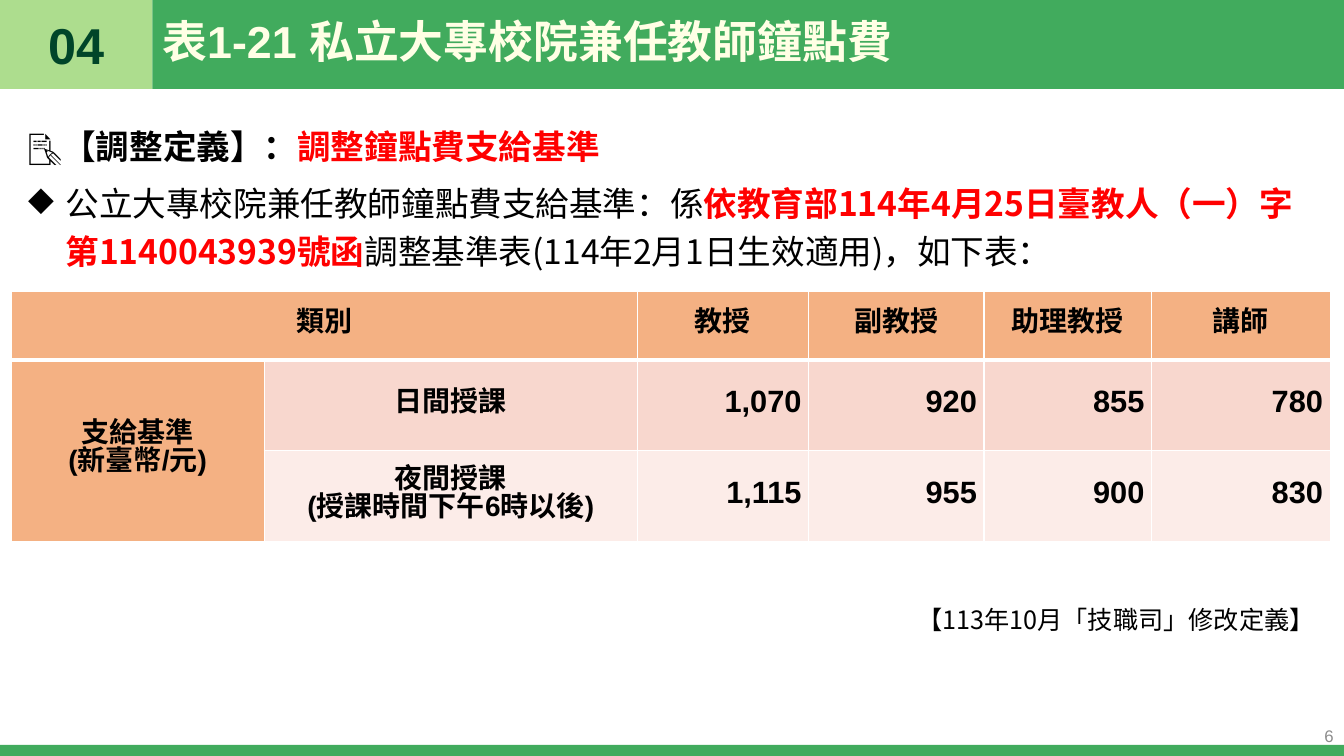
"""Build the slide on hourly pay for part-time teachers at private colleges."""
from dataclasses import dataclass

from lxml import etree
from pptx import Presentation
from pptx.dml.color import RGBColor
from pptx.enum.shapes import MSO_SHAPE
from pptx.enum.text import MSO_ANCHOR, PP_ALIGN
from pptx.oxml.ns import qn
from pptx.util import Cm, Pt

RECTANGLE = MSO_SHAPE.RECTANGLE
LEFT, CENTER, RIGHT = PP_ALIGN.LEFT, PP_ALIGN.CENTER, PP_ALIGN.RIGHT
TOP, MIDDLE = MSO_ANCHOR.TOP, MSO_ANCHOR.MIDDLE


@dataclass(frozen=True)
class Theme:
    """Hold the colours, fonts and type sizes of the slide."""
    green: str = "41AB5D"
    light_green: str = "ADDD8E"
    dark_green: str = "004529"
    cream: str = "FFFFE5"
    black: str = "000000"
    red: str = "FF0000"
    grey: str = "8C8C8C"
    white: str = "FFFFFF"
    orange: str = "F4B183"
    day_row: str = "F8D7CE"
    night_row: str = "FCECE8"
    latin_font: str = "Arial"
    body_font: str = "Noto Sans CJK SC"
    number_size: int = 36
    title_size: int = 32
    body_size: int = 24
    pay_size: int = 22
    label_size: int = 20
    note_size: int = 18
    page_size: int = 12


THEME = Theme()
SLIDE_WIDTH, SLIDE_HEIGHT = 33.87, 19.05
HEADER_HEIGHT, NUMBER_WIDTH = 2.24, 3.84
FOOTER_HEIGHT = 0.28
BODY_LEFT, BODY_WIDTH = 0.46, 32.92
BULLET_INDENT = 0.94
COLUMN_WIDTHS = (6.38, 9.4, 4.32, 4.42, 4.22, 4.5)
ROW_HEIGHTS = (1.73, 2.29, 2.29)
RANKS = ("教授", "副教授", "助理教授", "講師")
PAY_ROWS = (
    (("日間授課",), ("1,070", "920", "855", "780"), THEME.day_row),
    (("夜間授課", "(授課時間下午6時以後)"), ("1,115", "955", "900", "830"), THEME.night_row),
)


def add_run(paragraph, text, size, color, bold=False, font=THEME.latin_font):
    """Add one formatted run to a paragraph."""
    run = paragraph.add_run()
    run.text = text
    run.font.size = Pt(size)
    run.font.bold = bold
    run.font.name = font
    run.font.color.rgb = RGBColor.from_string(color)
    if font == THEME.body_font:
        etree.SubElement(run.font._element, qn("a:ea"), typeface=font)


def format_paragraph(paragraph, align=LEFT, spacing=1.0, before=0):
    """Set the alignment and spacing of a paragraph and return it."""
    paragraph.alignment = align
    paragraph.line_spacing = spacing
    paragraph.space_before = Pt(before)
    return paragraph


def add_bullet(paragraph):
    """Give a paragraph a diamond bullet with a hanging indent."""
    properties = paragraph._p.get_or_add_pPr()
    properties.set("marL", str(Cm(BULLET_INDENT)))
    properties.set("indent", str(-Cm(BULLET_INDENT)))
    etree.SubElement(properties, qn("a:buChar"), char="◆")


def add_band(slide, left, top, width, height, color):
    """Add a plain coloured band and return its text frame."""
    band = slide.shapes.add_shape(RECTANGLE, Cm(left), Cm(top), Cm(width), Cm(height))
    band.shadow.inherit = False
    band.fill.solid()
    band.fill.fore_color.rgb = RGBColor.from_string(color)
    band.line.fill.background()
    band.text_frame.vertical_anchor = MIDDLE
    return band.text_frame


def add_text_box(slide, left, top, width, height, anchor=TOP):
    """Add a wrapping text box and return its text frame."""
    frame = slide.shapes.add_textbox(Cm(left), Cm(top), Cm(width), Cm(height)).text_frame
    frame.word_wrap = True
    frame.vertical_anchor = anchor
    return frame


def add_frame(slide):
    """Add the header, footer band and page number."""
    add_band(slide, 0, SLIDE_HEIGHT - FOOTER_HEIGHT, SLIDE_WIDTH, FOOTER_HEIGHT, THEME.green)
    number = add_band(slide, 0, 0, NUMBER_WIDTH, HEADER_HEIGHT, THEME.light_green)
    add_run(format_paragraph(number.paragraphs[0], CENTER, before=10),
            "04", THEME.number_size, THEME.dark_green, True)
    title = add_band(slide, NUMBER_WIDTH, 0, SLIDE_WIDTH - NUMBER_WIDTH, HEADER_HEIGHT, THEME.green)
    add_run(format_paragraph(title.paragraphs[0], spacing=0.9),
            "表1-21 私立大專校院兼任教師鐘點費", THEME.title_size, THEME.cream, True)
    page = add_text_box(slide, 26.24, 18.03, 7.62, 1.02, MIDDLE)
    add_run(format_paragraph(page.paragraphs[0], RIGHT), "6", THEME.page_size, THEME.grey)


def add_definition(slide):
    """Add the adjusted definition and its legal basis."""
    frame = add_text_box(slide, BODY_LEFT, 2.95, BODY_WIDTH, 4.2)
    heading = format_paragraph(frame.paragraphs[0], spacing=1.1, before=6)
    add_run(heading, "📝", THEME.body_size, THEME.black)
    for text, color in (("【調整定義】：", THEME.black), ("調整鐘點費支給基準", THEME.red)):
        add_run(heading, text, THEME.body_size, color, True, THEME.body_font)
    basis = format_paragraph(frame.add_paragraph(), spacing=1.2, before=6)
    add_bullet(basis)
    for text, color, bold in (
        ("公立大專校院兼任教師鐘點費支給基準：係", THEME.black, False),
        ("依教育部114年4月25日臺教人（一）字第1140043939號函", THEME.red, True),
        ("調整基準表(114年2月1日生效適用)，如下表：", THEME.black, False),
    ):
        add_run(basis, text, THEME.body_size, color, bold, THEME.body_font)


def add_note(slide):
    """Add the revision note below the table."""
    frame = add_text_box(slide, BODY_LEFT, 15.02, BODY_WIDTH, 1.27)
    add_run(format_paragraph(frame.paragraphs[0], RIGHT, 1.1, 6),
            "【113年10月「技職司」修改定義】", THEME.note_size, THEME.black, font=THEME.body_font)


def set_borders(cell, top, bottom):
    """Draw white borders around a cell, with top and bottom widths in points."""
    properties = cell._tc.get_or_add_tcPr()
    for side, width in (("L", 1), ("R", 1), ("T", top), ("B", bottom)):
        line = etree.SubElement(properties, qn(f"a:ln{side}"), w=str(Pt(width)))
        fill = etree.SubElement(line, qn("a:solidFill"))
        etree.SubElement(fill, qn("a:srgbClr"), val=THEME.white)


def fill_cell(cell, lines, size=THEME.label_size, align=CENTER):
    """Write bold lines into a table cell."""
    for index, text in enumerate(lines):
        frame = cell.text_frame
        paragraph = frame.add_paragraph() if index else frame.paragraphs[0]
        add_run(format_paragraph(paragraph, align, Pt(20)), text, size, THEME.black, True)


def add_pay_table(slide):
    """Add the table of hourly pay by class time and rank."""
    table = slide.shapes.add_table(
        len(ROW_HEIGHTS), len(COLUMN_WIDTHS), Cm(0.28), Cm(7.34),
        Cm(sum(COLUMN_WIDTHS)), Cm(sum(ROW_HEIGHTS))).table
    for column, width in zip(table.columns, COLUMN_WIDTHS):
        column.width = Cm(width)
    row_colors = (THEME.orange, *(color for _, _, color in PAY_ROWS))
    for row_index, (row, height) in enumerate(zip(table.rows, ROW_HEIGHTS)):
        row.height = Cm(height)
        for column_index, cell in enumerate(row.cells):
            set_borders(cell, 3 if row_index == 1 else 1, 1 if row_index else 3)
            cell.fill.solid()
            color = row_colors[row_index] if column_index else THEME.orange
            cell.fill.fore_color.rgb = RGBColor.from_string(color)
            cell.vertical_anchor = MIDDLE
            cell.margin_left = cell.margin_right = Cm(0.18)
            cell.margin_top = cell.margin_bottom = 0
    table.cell(0, 0).merge(table.cell(0, 1))
    table.cell(1, 0).merge(table.cell(2, 0))
    fill_cell(table.cell(0, 0), ("類別",))
    fill_cell(table.cell(1, 0), ("支給基準", "(新臺幣/元)"))
    for column_index, rank in enumerate(RANKS, start=2):
        fill_cell(table.cell(0, column_index), (rank,))
    for row_index, (class_time, amounts, _) in enumerate(PAY_ROWS, start=1):
        fill_cell(table.cell(row_index, 1), class_time)
        for column_index, amount in enumerate(amounts, start=2):
            fill_cell(table.cell(row_index, column_index), (amount,), THEME.pay_size, RIGHT)


def main():
    """Build the slide and save it."""
    presentation = Presentation()
    presentation.slide_width = Cm(SLIDE_WIDTH)
    presentation.slide_height = Cm(SLIDE_HEIGHT)
    slide = presentation.slides.add_slide(presentation.slide_layouts[6])
    add_frame(slide)
    add_definition(slide)
    add_pay_table(slide)
    add_note(slide)
    presentation.save("out.pptx")


if __name__ == "__main__":
    main()
